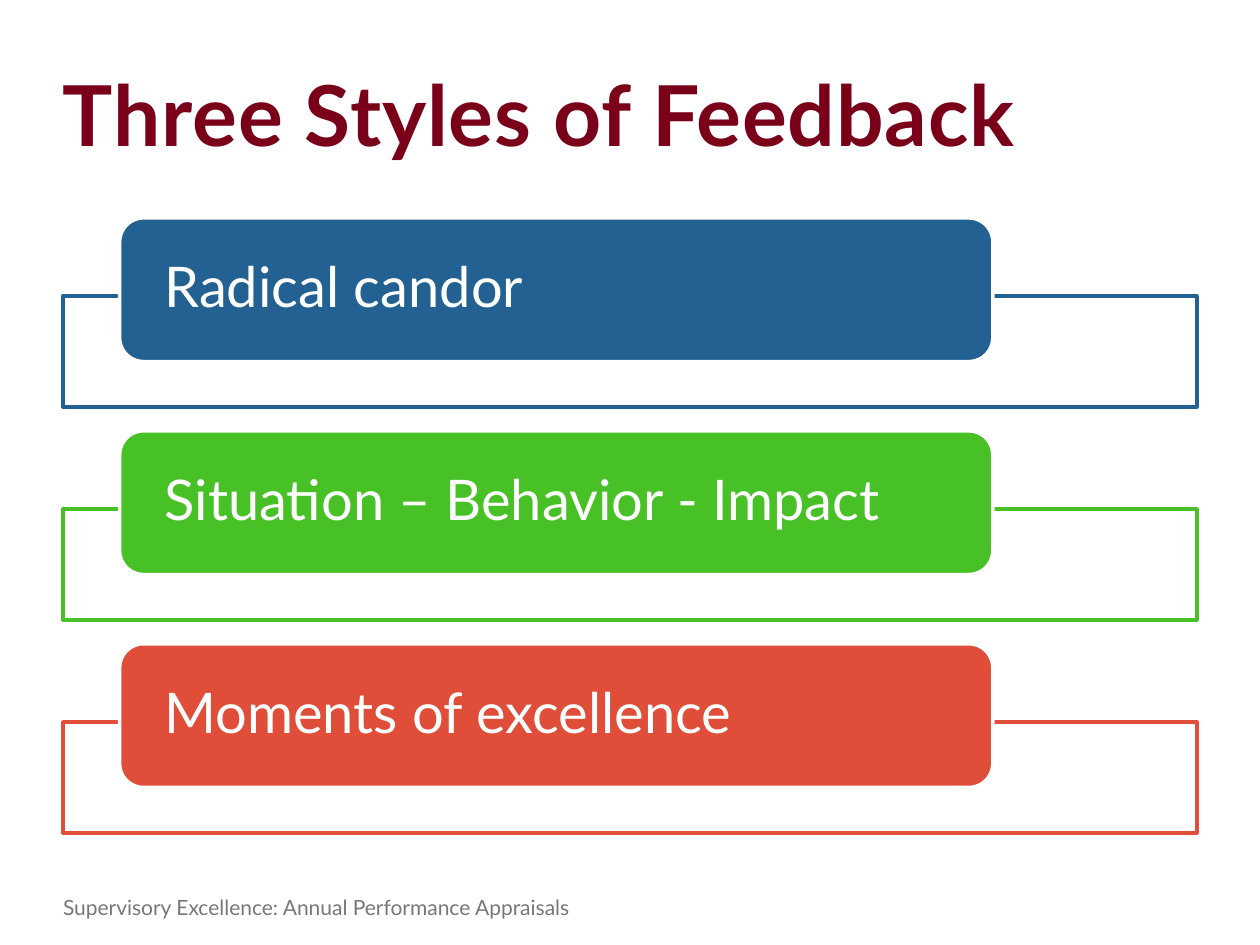
import pptx
import pptx.util
import pptx.dml.color
import pptx.enum.shapes
import pptx.enum.text
import pptx.oxml.ns
import lxml.etree

Inches = pptx.util.Inches
Pt = pptx.util.Pt
RGB = pptx.dml.color.RGBColor
KIND = pptx.enum.shapes.MSO_SHAPE
ANCHOR = pptx.enum.text.MSO_ANCHOR
ALIGN = pptx.enum.text.PP_ALIGN

FONT = "Lato"
WHITE = RGB(0xFF, 0xFF, 0xFF)
MAROON = RGB(0x7A, 0x00, 0x19)
GRAY = RGB(0x75, 0x78, 0x7B)
BLUE = RGB(0x23, 0x61, 0x92)
GREEN = RGB(0x48, 0xC1, 0x26)
RED = RGB(0xE0, 0x4E, 0x39)

STYLES = [
    ("Radical candor", BLUE),
    ("Situation – Behavior - Impact", GREEN),
    ("Moments of excellence", RED),
]
TOP = 1.73
STEP = 1.69


def write(frame, text, size, color, inset=0):
    frame.word_wrap = True
    frame.margin_left = frame.margin_right = Inches(inset)
    frame.margin_top = frame.margin_bottom = 0
    para = frame.paragraphs[0]
    para.alignment = ALIGN.LEFT
    run = para.add_run()
    run.text = text
    run.font.name = FONT
    run.font.size = Pt(size)
    run.font.color.rgb = color
    return run


def add_text(slide, left, top, width, height, text, size, color):
    box = slide.shapes.add_textbox(
        Inches(left), Inches(top), Inches(width), Inches(height))
    return write(box.text_frame, text, size, color)


def add_block(slide, kind, left, top, width, height, fill, line):
    block = slide.shapes.add_shape(
        kind, Inches(left), Inches(top), Inches(width), Inches(height))
    block.shadow.inherit = False
    block.fill.solid()
    block.fill.fore_color.rgb = fill
    block.line.color.rgb = line
    block.line.width = Pt(2)
    return block


def fade(block, percent):
    qn = pptx.oxml.ns.qn
    color = block.element.spPr.find(qn("a:solidFill")).find(qn("a:srgbClr"))
    alpha = lxml.etree.SubElement(color, qn("a:alpha"))
    alpha.set("val", str(percent * 1000))


def add_style(slide, top, text, color):
    frame = add_block(
        slide, KIND.RECTANGLE, 0.5, top + 0.62, 9, 0.88, WHITE, color)
    fade(frame, 90)
    label = add_block(
        slide, KIND.ROUNDED_RECTANGLE, 0.95, top, 6.93, 1.14, color, WHITE)
    label.text_frame.vertical_anchor = ANCHOR.MIDDLE
    write(label.text_frame, text, 32, WHITE, 0.24 + 0.06)
    label.text_frame.paragraphs[0].line_spacing = 0.9


def main():
    deck = pptx.Presentation()
    deck.slide_width = Inches(10)
    deck.slide_height = Inches(7.5)
    slide = deck.slides.add_slide(deck.slide_layouts[6])

    title = add_text(
        slide, 0.5, 0.5, 9, 0.76, "Three Styles of Feedback", 48, MAROON)
    title.font.bold = True
    title.font._element.set("spc", "50")

    for row, (text, color) in enumerate(STYLES):
        add_style(slide, TOP + row * STEP, text, color)

    add_text(
        slide, 0.5, 7.1, 6.68, 0.31,
        "Supervisory Excellence: Annual Performance Appraisals", 12, GRAY)

    deck.save("out.pptx")


if __name__ == "__main__":
    main()
